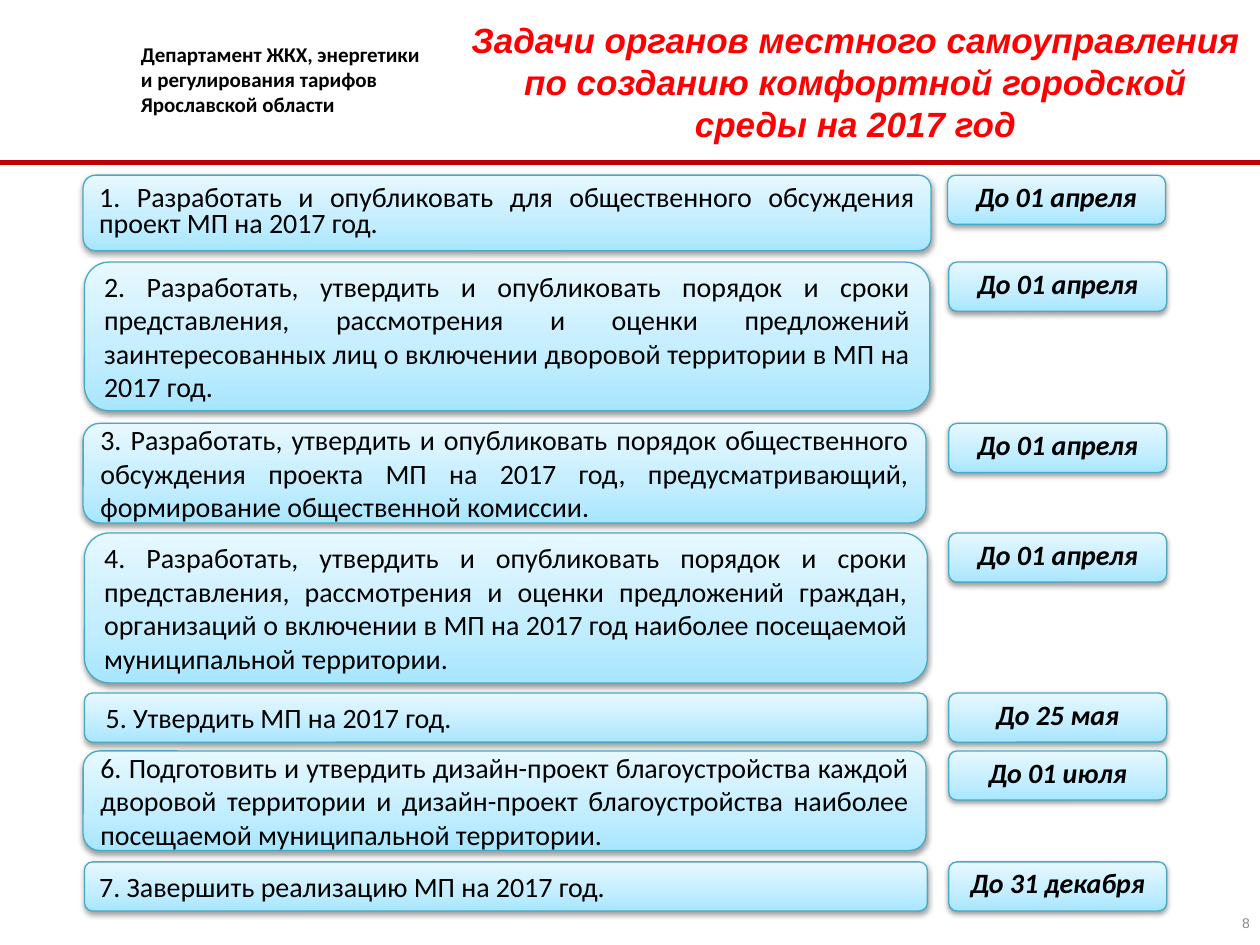
import copy

import lxml.etree
import pptx
import pptx.dml.color
import pptx.enum.shapes
import pptx.enum.text
import pptx.oxml
import pptx.oxml.ns
import pptx.util

Inches = pptx.util.Inches
Pt = pptx.util.Pt
RGBColor = pptx.dml.color.RGBColor
Align = pptx.enum.text.PP_ALIGN
Anchor = pptx.enum.text.MSO_ANCHOR
qn = pptx.oxml.ns.qn

BLACK = RGBColor(0, 0, 0)
RED = RGBColor(0xFF, 0, 0)
DARK = RGBColor(0xC0, 0, 0)
GRAY = RGBColor(0x89, 0x89, 0x89)
EDGE = RGBColor(0x46, 0xAA, 0xC5)
DEEP = RGBColor(0xA7, 0xE6, 0xFF)
MID = RGBColor(0xC1, 0xED, 0xFF)
PALE = RGBColor(0xE7, 0xF8, 0xFF)

SHADOW = (
    '<a:effectLst xmlns:a="http://schemas.openxmlformats.org/drawingml/2006/main">'
    '<a:outerShdw blurRad="40000" dist="20000" dir="5400000" rotWithShape="0">'
    '<a:srgbClr val="000000"><a:alpha val="38000"/></a:srgbClr>'
    '</a:outerShdw></a:effectLst>'
)

deck = pptx.Presentation()
deck.slide_width = Inches(10)
deck.slide_height = Inches(7.5)
slide = deck.slides.add_slide(deck.slide_layouts[6])
shapes = slide.shapes


def write(frame, lines, size, font, color, align, bold=False, italic=False):
    frame.word_wrap = True
    for i, line in enumerate(lines):
        para = frame.add_paragraph() if i else frame.paragraphs[0]
        para.alignment = align
        run = para.add_run()
        run.text = line
        run.font.size = Pt(size)
        run.font.name = font
        run.font.color.rgb = color
        run.font.bold = bold
        run.font.italic = italic


def add_card(left, top, width, height):
    """Add a rounded card with a blue gradient and a soft shadow."""
    card = shapes.add_shape(
        pptx.enum.shapes.MSO_SHAPE.ROUNDED_RECTANGLE,
        Inches(left), Inches(top), Inches(width), Inches(height))
    card.fill.gradient()
    card.fill.gradient_angle = 90
    stops = card._element.spPr.find(".//" + qn("a:gsLst"))
    stops.insert(1, copy.deepcopy(stops[0]))
    tints = [(0, DEEP), (0.35, MID), (1, PALE)]
    for stop, (place, tint) in zip(card.fill.gradient_stops, tints):
        stop.position = place
        stop.color.rgb = tint
    card.line.color.rgb = EDGE
    card.line.width = Pt(0.75)
    card._element.spPr.append(pptx.oxml.parse_xml(SHADOW))
    card.text_frame.vertical_anchor = Anchor.MIDDLE
    return card


# Header
owner = shapes.add_textbox(Inches(1.02), Inches(0.28), Inches(2.44), Inches(0.71))
write(owner.text_frame,
      ["Департамент ЖКХ, энергетики и регулирования тарифов", "Ярославской области"],
      12, "Calibri", BLACK, Align.LEFT, bold=True)

rule = shapes.add_connector(
    pptx.enum.shapes.MSO_CONNECTOR.STRAIGHT,
    Inches(-0.02), Inches(1.29), Inches(10.02), Inches(1.29))
rule.line.color.rgb = DARK
rule.line.width = Pt(2.5)
lxml.etree.SubElement(rule._element.spPr, qn("a:effectLst"))

title = shapes.add_textbox(Inches(3.64), Inches(0.1), Inches(6.3), Inches(1.11))
write(title.text_frame,
      ["Задачи органов местного самоуправления по созданию комфортной городской среды на 2017 год"],
      20, "Arial", RED, Align.CENTER, bold=True, italic=True)

# Tasks: left, top, width, height, text, due date
tasks = [
    (0.66, 1.39, 6.73, 0.6,
     "1. Разработать и опубликовать для общественного обсуждения проект МП на 2017 год.",
     "До 01 апреля"),
    (0.67, 2.08, 6.71, 1.18,
     "2. Разработать, утвердить и опубликовать порядок и сроки представления, рассмотрения "
     "и оценки предложений заинтересованных лиц о включении дворовой территории в МП на 2017 год.",
     "До 01 апреля"),
    (0.66, 3.36, 6.69, 0.79,
     "3. Разработать, утвердить и опубликовать порядок общественного обсуждения проекта МП "
     "на 2017 год, предусматривающий, формирование общественной комиссии.",
     "До 01 апреля"),
    (0.67, 4.23, 6.69, 1.19,
     "4. Разработать, утвердить и опубликовать порядок и сроки представления, рассмотрения "
     "и оценки предложений граждан, организаций о включении в МП на 2017 год наиболее "
     "посещаемой муниципальной территории.",
     "До 01 апреля"),
    (0.67, 5.5, 6.69, 0.39, "5. Утвердить МП на 2017 год.", "До 25 мая"),
    (0.66, 5.96, 6.69, 0.79,
     "6. Подготовить и утвердить дизайн-проект благоустройства каждой дворовой территории "
     "и дизайн-проект благоустройства наиболее посещаемой муниципальной территории.",
     "До 01 июля"),
    (0.67, 6.84, 6.69, 0.39, "7. Завершить реализацию МП на 2017 год.", "До 31 декабря"),
]
for i, (left, top, width, height, text, due) in enumerate(tasks):
    task = add_card(left, top, width, height)
    write(task.text_frame, [text], 16, "Calibri", BLACK, Align.JUSTIFY)
    if i == 0:
        task.text_frame.paragraphs[0].line_spacing = Pt(15)
    if i == 4:
        task.text_frame.margin_left = Inches(0.15)

    date = add_card(7.53 if i else 7.52, top, 1.73, 0.39)
    write(date.text_frame, [due], 16, "Calibri", BLACK, Align.CENTER, bold=True, italic=True)
    date.text_frame.paragraphs[0].line_spacing = Pt(15)

# Page number
page = shapes.add_textbox(Inches(9.56), Inches(7.22), Inches(0.4), Inches(0.21))
frame = page.text_frame
frame.vertical_anchor = Anchor.MIDDLE
frame.margin_left = frame.margin_right = Inches(0.04)
frame.margin_top = frame.margin_bottom = Inches(0.04)
write(frame, ["8"], 8, "Arial", GRAY, Align.RIGHT)

deck.save("out.pptx")
